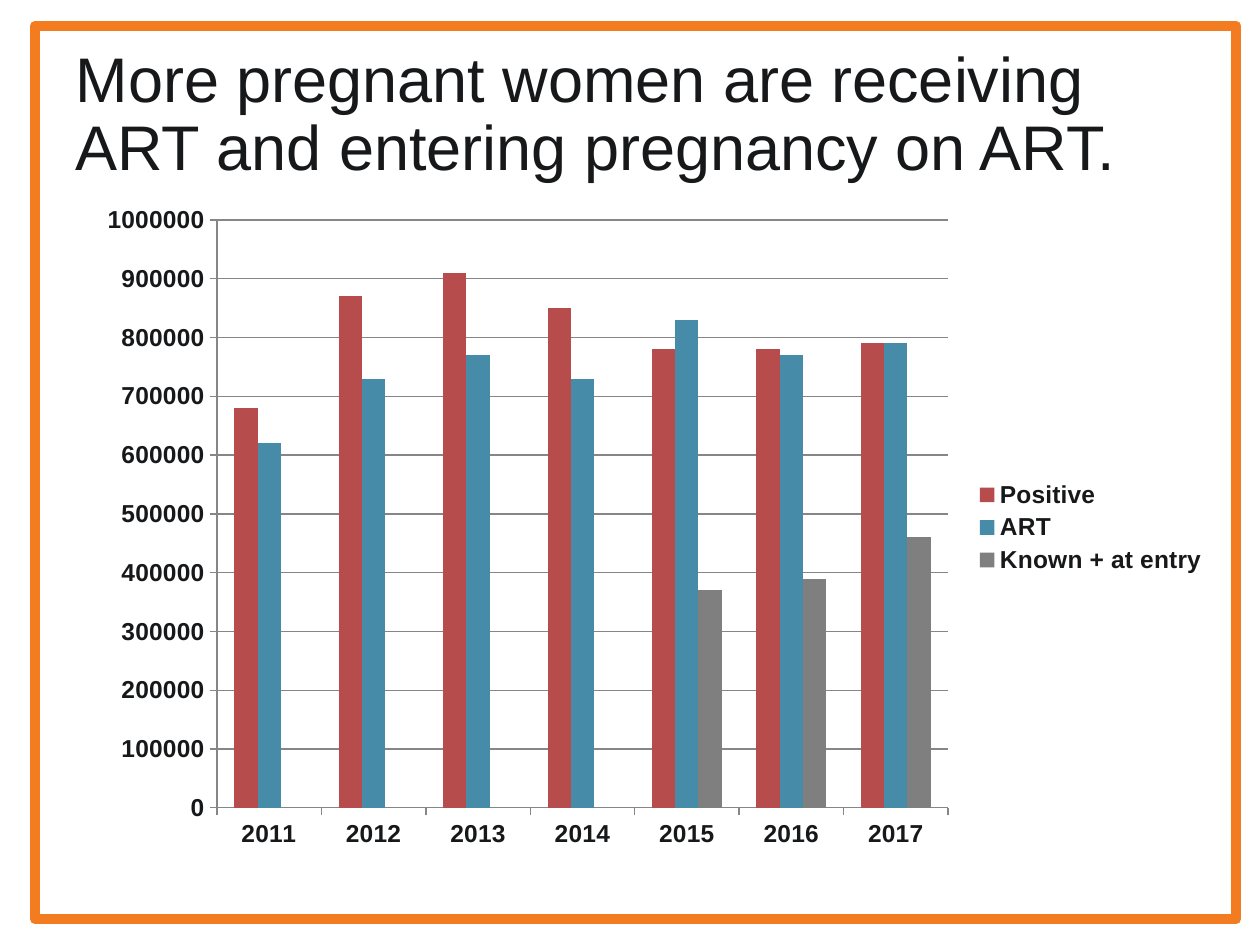
from lxml import etree
from pptx import Presentation
from pptx.chart.data import CategoryChartData
from pptx.dml.color import RGBColor
from pptx.enum.chart import XL_CHART_TYPE, XL_LEGEND_POSITION, XL_TICK_MARK
from pptx.enum.shapes import MSO_SHAPE
from pptx.enum.text import MSO_ANCHOR, PP_ALIGN
from pptx.oxml.ns import qn
from pptx.util import Emu, Pt

COLUMNS = XL_CHART_TYPE.COLUMN_CLUSTERED
LEGEND_RIGHT = XL_LEGEND_POSITION.RIGHT
TICK_OUT, TICK_NONE = XL_TICK_MARK.OUTSIDE, XL_TICK_MARK.NONE
RECTANGLE = MSO_SHAPE.RECTANGLE
MIDDLE, LEFT = MSO_ANCHOR.MIDDLE, PP_ALIGN.LEFT

ORANGE = RGBColor(0xF4, 0x7C, 0x20)
INK = RGBColor(0x16, 0x18, 0x1A)
RED = RGBColor(0xB6, 0x4C, 0x4B)
BLUE = RGBColor(0x46, 0x8C, 0xA8)
GREY = RGBColor(0x7F, 0x7F, 0x7F)
RULE_GREY = RGBColor(0x86, 0x86, 0x86)
FONT = "Arial"

HEADLINE = "More pregnant women are receiving ART and entering pregnancy on ART."
YEARS = ["2011", "2012", "2013", "2014", "2015", "2016", "2017"]
SERIES = [
    ("Positive", RED, [680000, 870000, 910000, 850000, 780000, 780000, 790000]),
    ("ART", BLUE, [620000, 730000, 770000, 730000, 830000, 770000, 790000]),
    ("Known + at entry", GREY, [None, None, None, None, 370000, 390000, 460000]),
]

SLIDE_SIZE = (1260, 945)
FRAME_BOX = (35, 26, 1201, 893)
HEADLINE_BOX = (63, 38, 1134, 157)
CHART_BOX = (86, 193, 1134, 669)
PLOT_BOX = (217, 220, 731, 588)


def px(length):
    return Emu(round(length * 914400 / 126))


def place(box):
    return [px(length) for length in box]


def style_font(font, size, bold):
    font.name = FONT
    font.size = Pt(size)
    font.bold = bold
    font.color.rgb = INK


def add_frame(slide):
    frame = slide.shapes.add_shape(RECTANGLE, *place(FRAME_BOX))
    frame.shadow.inherit = False
    frame.fill.background()
    frame.line.color.rgb = ORANGE
    frame.line.width = Pt(6)
    slide.shapes._spTree.insert(2, frame._element)


def fill_headline(headline):
    headline.left, headline.top, headline.width, headline.height = place(HEADLINE_BOX)
    headline.text_frame.word_wrap = True
    headline.text_frame.vertical_anchor = MIDDLE
    paragraph = headline.text_frame.paragraphs[0]
    paragraph.alignment = LEFT
    paragraph.line_spacing = 0.9
    run = paragraph.add_run()
    run.text = HEADLINE
    style_font(run.font, 36, False)


def fix_plot_area(chart):
    plot_area = chart._chartSpace.chart.plotArea
    for old_layout in plot_area.findall(qn("c:layout")):
        plot_area.remove(old_layout)
    layout = etree.Element(qn("c:layout"))
    manual = etree.SubElement(layout, qn("c:manualLayout"))
    left, top, width, height = CHART_BOX
    plot_left, plot_top, plot_width, plot_height = PLOT_BOX
    settings = [
        ("layoutTarget", "inner"), ("xMode", "edge"), ("yMode", "edge"),
        ("x", (plot_left - left) / width), ("y", (plot_top - top) / height),
        ("w", plot_width / width), ("h", plot_height / height),
    ]
    for tag, value in settings:
        etree.SubElement(manual, qn("c:" + tag)).set("val", str(value))
    plot_area.insert(0, layout)


def add_treatment_chart(slide):
    chart_data = CategoryChartData(number_format="General")
    chart_data.categories = YEARS
    for name, _, values in SERIES:
        chart_data.add_series(name, values)
    chart = slide.shapes.add_chart(COLUMNS, *place(CHART_BOX), chart_data).chart
    style_font(chart.font, 14, True)
    chart.has_title = False
    chart.has_legend = True
    chart.legend.position = LEGEND_RIGHT
    chart.legend.include_in_layout = False

    plot = chart.plots[0]
    plot.gap_width = 150
    plot.overlap = 0
    plot.vary_by_categories = False
    for series, (_, color, _) in zip(plot.series, SERIES):
        series.format.fill.solid()
        series.format.fill.fore_color.rgb = color

    for axis in (chart.category_axis, chart.value_axis):
        axis.major_tick_mark = TICK_OUT
        axis.minor_tick_mark = TICK_NONE
        axis.format.line.color.rgb = RULE_GREY
    values_axis = chart.value_axis
    values_axis.minimum_scale = 0
    values_axis.maximum_scale = 1000000
    values_axis.major_unit = 100000
    values_axis.has_major_gridlines = True
    values_axis.major_gridlines.format.line.color.rgb = RULE_GREY
    fix_plot_area(chart)


def main():
    deck = Presentation()
    deck.slide_width, deck.slide_height = place(SLIDE_SIZE)
    slide = deck.slides.add_slide(deck.slide_layouts[5])
    add_frame(slide)
    fill_headline(slide.shapes.title)
    add_treatment_chart(slide)
    deck.save("out.pptx")


if __name__ == "__main__":
    main()
